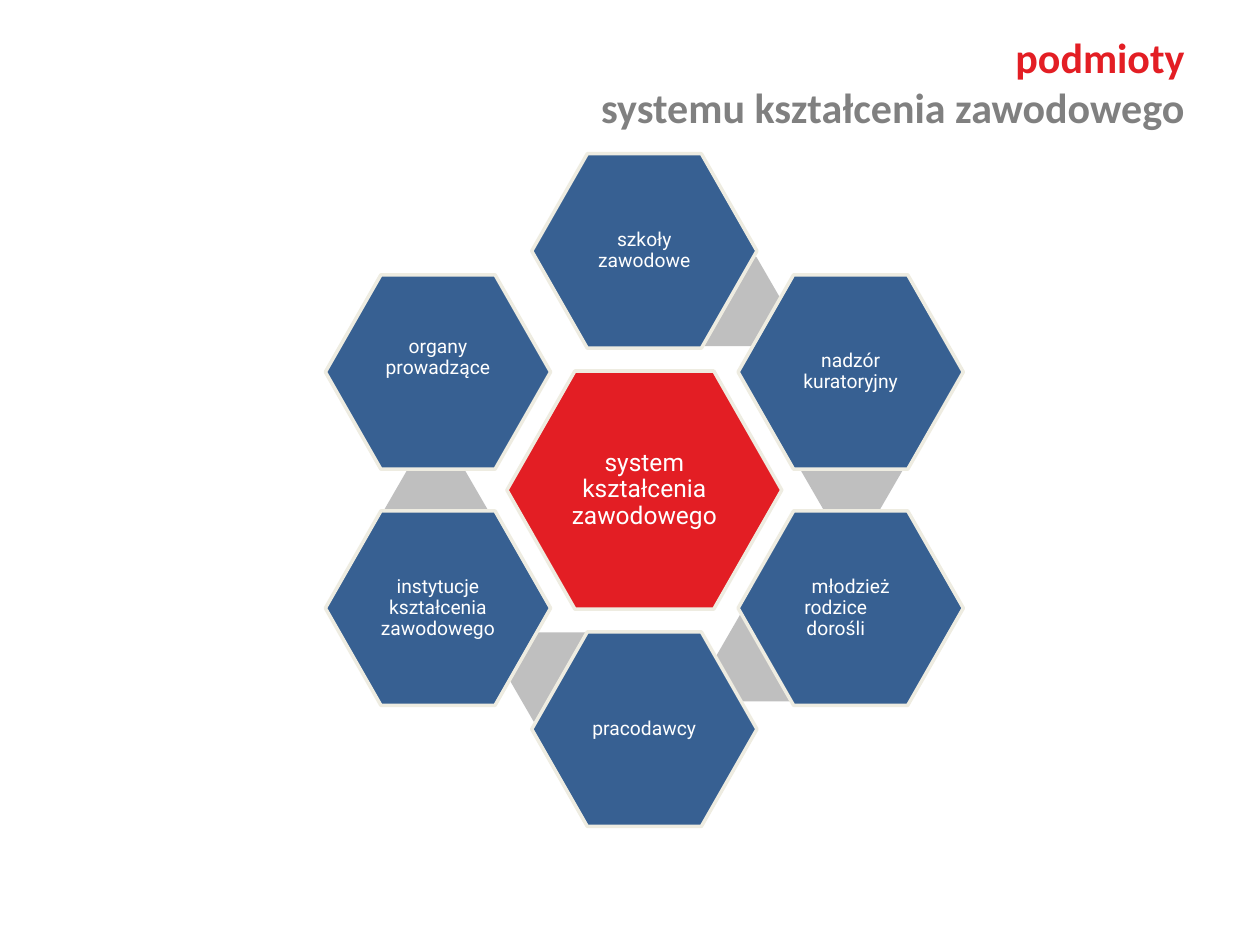
from pptx import Presentation
from pptx import util as u
from pptx.dml.color import RGBColor
from pptx.enum import shapes, text


def paint(target, color):
    target.solid()
    target.fore_color.rgb = RGBColor.from_string(color)


def add_hexagon(slide, center, half_width, half_height, half_edge, color, label, size, insets):
    x, y = center
    corners = [(-half_width, 0), (-half_edge, -half_height), (half_edge, -half_height),
               (half_width, 0), (half_edge, half_height), (-half_edge, half_height)]
    points = [(u.Cm(x + dx), u.Cm(y + dy)) for dx, dy in corners]
    builder = slide.shapes.build_freeform(*points[0])
    builder.add_line_segments(points[1:], close=True)
    shape = builder.convert_to_shape()
    shape.shadow.inherit = False
    paint(shape.fill, color)
    paint(shape.line.fill, "EEECE1")
    shape.line.width = u.Pt(2)
    frame = shape.text_frame
    frame.word_wrap = True
    frame.vertical_anchor = text.MSO_ANCHOR.MIDDLE
    frame.margin_left = frame.margin_right = u.Cm(insets[0])
    frame.margin_top = frame.margin_bottom = u.Cm(insets[1])
    frame.text = label
    for paragraph in frame.paragraphs:
        paragraph.alignment = text.PP_ALIGN.CENTER
        paragraph.line_spacing = 0.9
        paragraph.font.size = u.Pt(size)
        paragraph.font.name = "Roboto"
        paint(paragraph.font.fill, "FFFFFF")
    return shape


presentation = Presentation()
presentation.slide_width = u.Cm(25.4)
presentation.slide_height = u.Cm(19.05)
slide = presentation.slides.add_slide(presentation.slide_layouts[6])

center_x, center_y = 12.99, 9.88
column, near_row, far_row = 4.16, 2.38, 4.82

add_hexagon(slide, (center_x, center_y), 2.77, 2.4, 1.4, "E31E24",
            "system kształcenia zawodowego", 14, (0.99, 0.86))

members = [
    ("szkoły zawodowe", 0, -far_row, (13.69, 5.18)),
    ("nadzór kuratoryjny", column, -near_row, (16.13, 8.56)),
    ("młodzież\nrodzice\ndorośli", column, near_row, (14.43, 12.34)),
    ("pracodawcy", 0, far_row, (10.24, 12.75)),
    ("instytucje kształcenia zawodowego", -column, near_row, (7.75, 9.37)),
    ("organy prowadzące", -column, -near_row, None),
]
hexagons = {}
for label, dx, dy, link in members:
    if link:
        shape = slide.shapes.add_shape(shapes.MSO_SHAPE.HEXAGON, u.Cm(link[0]), u.Cm(link[1]),
                                       u.Cm(2.08), u.Cm(1.8))
        shape.adjustments[0] = 0.289
        shape.shadow.inherit = False
        paint(shape.fill, "BFBFBF")
        shape.line.fill.background()
    hexagons[label] = add_hexagon(slide, (center_x + dx, center_y + dy), 2.27, 1.96, 1.15,
                                  "376092", label, 11, (0.79, 0.69))

hexagons["organy prowadzące"].text_frame.margin_bottom = u.Cm(1.25)
learners = hexagons["młodzież\nrodzice\ndorośli"].text_frame
learners.paragraphs[1]._p.get_or_add_pPr().set("marR", str(u.Cm(0.6)))

title = slide.shapes.add_textbox(u.Cm(1.27), u.Cm(0.51), u.Cm(22.86), u.Cm(3.18))
title.text_frame.word_wrap = True
title.text_frame.text = "podmioty\nsystemu kształcenia zawodowego"
for paragraph, color in zip(title.text_frame.paragraphs, ("E31E24", "808080")):
    paragraph.alignment = text.PP_ALIGN.RIGHT
    paragraph.font.size = u.Pt(24)
    paragraph.font.name = "Calibri"
    paragraph.font.bold = True
    paint(paragraph.font.fill, color)

presentation.save("out.pptx")
